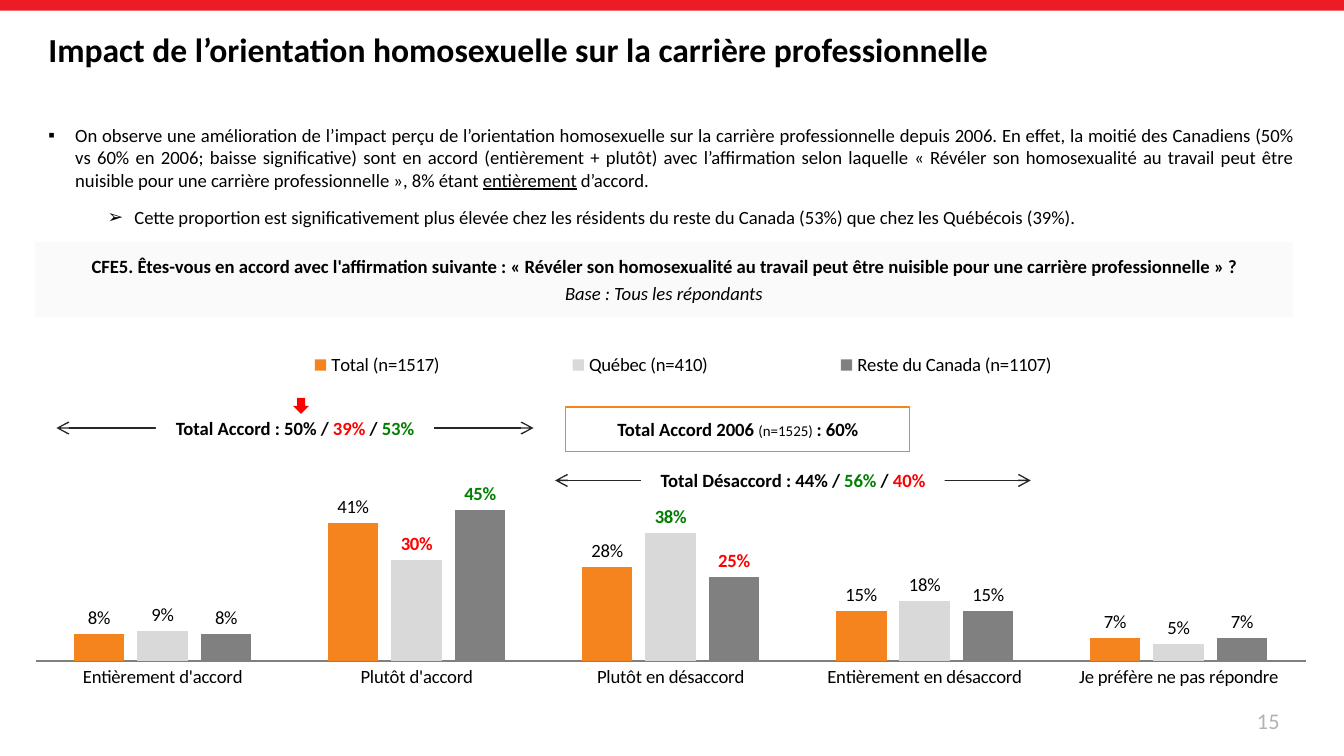
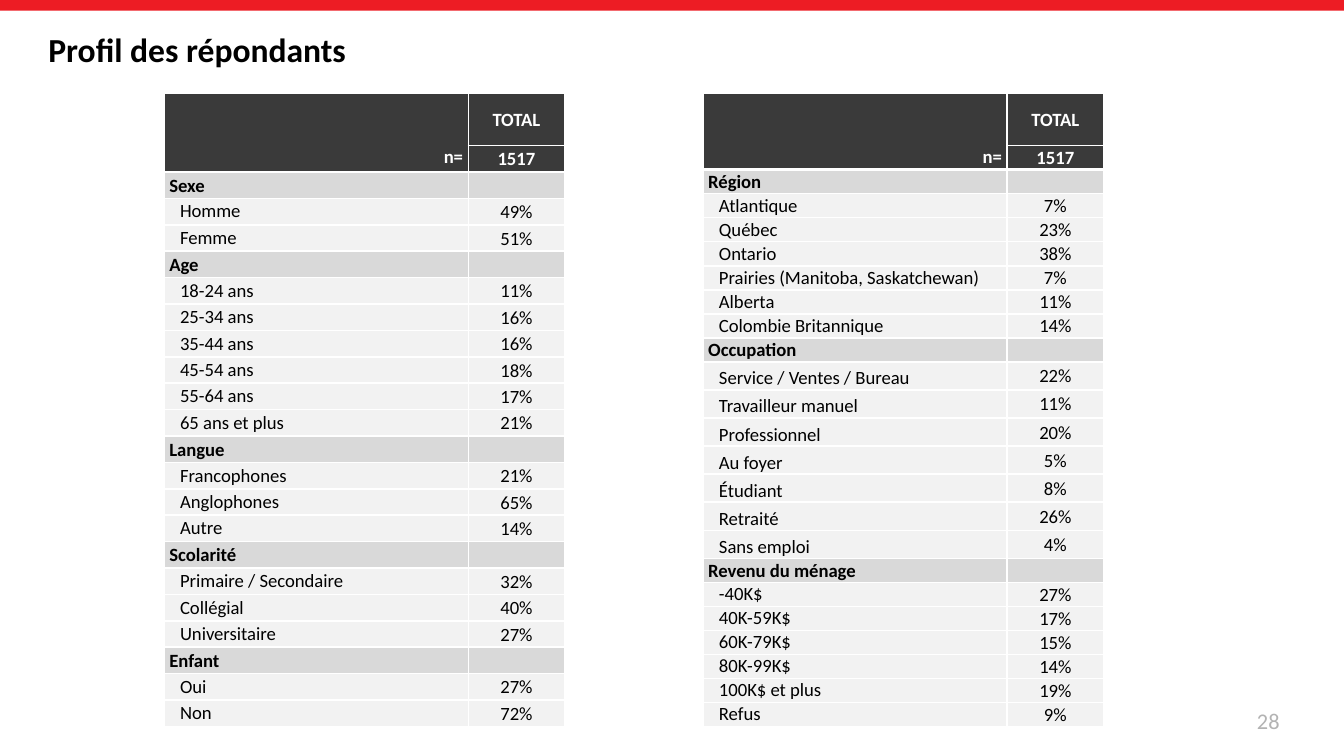
import typing

import lxml.etree
import pptx
import pptx.chart.data
import pptx.dml.color
import pptx.enum.chart
import pptx.enum.shapes
import pptx.enum.text
import pptx.oxml.ns
import pptx.util

Color = pptx.dml.color.RGBColor
Pt = pptx.util.Pt
Align = pptx.enum.text.PP_ALIGN
Anchor = pptx.enum.text.MSO_ANCHOR
Shape = pptx.enum.shapes.MSO_SHAPE
qn = pptx.oxml.ns.qn

BRAND = Color(0xED, 0x1C, 0x24)
BLACK = Color(0, 0, 0)
WHITE = Color(0xFF, 0xFF, 0xFF)
RED = Color(0xFF, 0, 0)
GREEN = Color(0, 0x80, 0)
ORANGE = Color(0xF5, 0x84, 0x1F)
DARK = Color(0x3A, 0x3A, 0x3A)
INK = Color(0x26, 0x26, 0x26)
GRAY = Color(0x80, 0x80, 0x80)
SILVER = Color(0xB3, 0xB3, 0xB3)
LIGHT = Color(0xD9, 0xD9, 0xD9)
PALE = Color(0xF2, 0xF2, 0xF2)
MIST = Color(0xFA, 0xFA, 0xFA)
FONT = "Calibri"

# The slide is a grid of square cells: 100 columns by 56.25 rows.
COLS, ROWS = 100, 56.25
CELL = pptx.util.Inches(0.1)


def span(cells):
    return pptx.util.Emu(round(cells * CELL))


class Box(typing.NamedTuple):
    left: float
    top: float
    width: float
    height: float

    def inner(self, left, top, width, height):
        """Box placed from this one's top left corner."""
        return Box(self.left + left, self.top + top, width, height)

    def spans(self):
        return [span(side) for side in self]


PAGE = Box(0, 0, COLS, ROWS)


def write(par, text, size=10, color=BLACK, bold=False, italic=False, under=False):
    run = par.add_run()
    run.text = text
    style(run.font, size, color, bold)
    run.font.italic = italic
    run.font.underline = under


def style(font, size=10, color=BLACK, bold=False, name=FONT):
    font.name, font.size, font.bold = name, Pt(size), bold
    font.color.rgb = color


def frame(shape, anchor=Anchor.MIDDLE, align=Align.LEFT, inset=None):
    """Set up the text frame and return its first paragraph."""
    text = shape.text_frame
    text.word_wrap = True
    text.auto_size = pptx.enum.text.MSO_AUTO_SIZE.NONE
    text.vertical_anchor = anchor
    if inset is not None:
        text.margin_left = text.margin_right = span(inset)
        text.margin_top = text.margin_bottom = span(inset)
    par = text.paragraphs[0]
    par.alignment = align
    return par


def place(shape, box):
    shape.left, shape.top, shape.width, shape.height = box.spans()


def draw(slide, box, kind=Shape.RECTANGLE, fill=None, line=None):
    shape = slide.shapes.add_shape(kind, *box.spans())
    shape.shadow.inherit = False
    if fill is None:
        shape.fill.background()
    else:
        shape.fill.solid()
        shape.fill.fore_color.rgb = fill
    if line is None:
        shape.line.fill.background()
    else:
        shape.line.color.rgb = line
        shape.line.width = Pt(0.75)
    return shape


def start(deck, layout, title, number):
    """Add a slide with the band, title and page number."""
    slide = deck.slides.add_slide(deck.slide_layouts[layout])
    draw(slide, PAGE.inner(0, 0, COLS, 0.8), fill=BRAND)
    place(slide.shapes.title, PAGE.inner(2.6, 0.8, 81.7, 5.7))
    write(frame(slide.shapes.title), title, size=18, bold=True)
    page = slide.shapes.add_textbox(*PAGE.inner(72.9, 52.1, 23.3, 3).spans())
    write(frame(page, align=Align.RIGHT), str(number), size=12, color=SILVER)
    return slide


def bullet(par, mark, left):
    props = par._p.get_or_add_pPr()
    props.set("marL", str(span(left)))
    props.set("indent", str(span(-2)))
    lxml.etree.SubElement(props, qn("a:buChar"), char=mark)
    par.alignment = Align.JUSTIFY
    par.space_after = Pt(6)


def add_body(slide, box):
    body = slide.placeholders[1]
    place(body, box)
    first = frame(body, anchor=Anchor.TOP)
    bullet(first, "▪", 2)
    first.space_before = Pt(0)
    write(first, "On observe une amélioration de l’impact perçu de l’orientation "
          "homosexuelle sur la carrière professionnelle depuis 2006. En effet, la moitié "
          "des Canadiens (50% vs 60% en 2006; baisse significative) sont en accord "
          "(entièrement + plutôt) avec l’affirmation selon laquelle « Révéler son "
          "homosexualité au travail peut être nuisible pour une carrière "
          "professionnelle », 8% étant ")
    write(first, "entièrement", under=True)
    write(first, " d’accord.")
    second = body.text_frame.add_paragraph()
    second.level = 1
    bullet(second, "➢", 6.4)
    second.space_before = Pt(2)
    write(second, "Cette proportion est significativement plus élevée chez les résidents "
          "du reste du Canada (53%) que chez les Québécois (39%).")


def add_query(slide, box):
    panel = draw(slide, box, fill=MIST)
    par = frame(panel, align=Align.CENTER)
    write(par, "CFE5. Êtes-vous en accord avec l'affirmation suivante : « Révéler son "
          "homosexualité au travail peut être nuisible pour une carrière "
          "professionnelle » ?", bold=True)
    base = panel.text_frame.add_paragraph()
    base.alignment = Align.CENTER
    base.space_before = Pt(2)
    write(base, "Base : Tous les répondants", italic=True)


CATS = ["Entièrement d'accord", "Plutôt d'accord", "Plutôt en désaccord",
        "Entièrement en désaccord", "Je préfère ne pas répondre"]
# Name, values, bar colour, colours of the marked labels
SERIES = [
    ("Total (n=1517)", [0.08, 0.41, 0.28, 0.15, 0.07], ORANGE, {}),
    ("Québec (n=410)", [0.09, 0.3, 0.38, 0.18, 0.05], LIGHT, {1: RED, 2: GREEN}),
    ("Reste du Canada (n=1107)", [0.08, 0.45, 0.25, 0.15, 0.07], GRAY,
     {1: GREEN, 2: RED}),
]


def lay(parent, index, **sides):
    """Give a chart part a fixed place, in shares of the chart."""
    for old in parent.findall(qn("c:layout")):
        parent.remove(old)
    layout = lxml.etree.Element(qn("c:layout"))
    manual = lxml.etree.SubElement(layout, qn("c:manualLayout"))
    for key, value in sides.items():
        lxml.etree.SubElement(manual, qn("c:" + key), val=str(value))
    parent.insert(index, layout)


def add_bars(slide, box):
    data = pptx.chart.data.CategoryChartData(number_format="0%")
    data.categories = CATS
    for name, values, *_ in SERIES:
        data.add_series(name, values)
    kind = pptx.enum.chart.XL_CHART_TYPE.COLUMN_CLUSTERED
    chart = slide.shapes.add_chart(kind, *box.spans(), data).chart
    style(chart.font, 9, name="Arial")
    chart.has_title = False
    chart.has_legend = True
    chart.legend.position = pptx.enum.chart.XL_LEGEND_POSITION.TOP
    chart.legend.include_in_layout = False
    style(chart.legend.font)
    lay(chart.legend._element, 1, xMode="edge", yMode="edge",
        x=0.12, y=0.11, w=0.78, h=0.06)
    lay(chart._chartSpace.chart.plotArea, 0, layoutTarget="inner", xMode="edge",
        yMode="edge", x=0, y=0.21, w=1, h=0.69)

    none = pptx.enum.chart.XL_TICK_MARK.NONE
    base, scale = chart.category_axis, chart.value_axis
    base.major_tick_mark = base.minor_tick_mark = none
    base.format.line.color.rgb = GRAY
    style(base.tick_labels.font)
    scale.minimum_scale, scale.maximum_scale, scale.major_unit = 0, 0.8, 0.1
    scale.has_major_gridlines = False
    scale.visible = False

    plot = chart.plots[0]
    plot.gap_width, plot.overlap, plot.vary_by_categories = 150, -25, False
    end = pptx.enum.chart.XL_LABEL_POSITION.OUTSIDE_END
    for bars, (_, _, color, marks) in zip(plot.series, SERIES):
        bars.format.fill.solid()
        bars.format.fill.fore_color.rgb = color
        labels = bars.data_labels
        labels.show_value = True
        labels.number_format, labels.number_format_is_linked = "0%", False
        labels.position = end
        style(labels.font)
        for index, mark in marks.items():
            label = bars.points[index].data_label
            style(label.font, color=mark, bold=True)
            label.position = end


def add_range(slide, box, width, words):
    """Draw a two-headed arrow across the box, with a label in its middle."""
    left, top, wide, high = box.spans()
    middle = top + high // 2
    kind = pptx.enum.shapes.MSO_CONNECTOR.STRAIGHT
    arrow = slide.shapes.add_connector(kind, left, middle, left + wide, middle)
    arrow.line.color.rgb = INK
    arrow.line.width = Pt(0.75)
    props = arrow._element.spPr
    for end in ("a:headEnd", "a:tailEnd"):
        lxml.etree.SubElement(props.find(qn("a:ln")), qn(end), type="arrow")
    lxml.etree.SubElement(props, qn("a:effectLst"))
    label = draw(slide, box.inner((box.width - width) / 2, 0, width, box.height),
                 fill=WHITE)
    par = frame(label, anchor=Anchor.TOP, align=Align.CENTER, inset=0.4)
    for text, color in words:
        write(par, text, color=color, bold=True)


def add_chart(slide, box):
    add_bars(slide, box)
    add_range(slide, box.inner(1.6, 7.5, 35.5, 2.5), 20.7,
              [("Total Accord : 50% / ", BLACK), ("39%", RED), (" / ", BLACK),
               ("53%", GREEN)])
    add_range(slide, box.inner(38.7, 11.4, 35.4, 2.5), 22.6,
              [("Total Désaccord : 44% / ", BLACK), ("56%", GREEN), (" / ", BLACK),
               ("40%", RED)])
    past = draw(slide, box.inner(39.5, 7.2, 25.6, 3.3), Shape.FLOWCHART_PROCESS,
                line=ORANGE)
    par = frame(past, align=Align.CENTER)
    write(par, "Total Accord 2006 ", bold=True)
    write(par, "(n=1525) ", size=8)
    write(par, ": 60%", bold=True)
    draw(slide, box.inner(19.2, 6.5, 1.2, 1.2), Shape.DOWN_ARROW, fill=RED)


# Heading, row height in units, rows
LEFT = [
    ("Sexe", 1, [("Homme", 49), ("Femme", 51)]),
    ("Age", 1, [("18-24 ans", 11), ("25-34 ans", 16), ("35-44 ans", 16),
                ("45-54 ans", 18), ("55-64 ans", 17), ("65 ans et plus", 21)]),
    ("Langue", 1, [("Francophones", 21), ("Anglophones", 65), ("Autre", 14)]),
    ("Scolarité", 1, [("Primaire / Secondaire", 32), ("Collégial", 40),
                      ("Universitaire", 27)]),
    ("Enfant", 1, [("Oui", 27), ("Non", 72)]),
]
RIGHT = [
    ("Région", 1, [("Atlantique", 7), ("Québec", 23), ("Ontario", 38),
                   ("Prairies (Manitoba, Saskatchewan)", 7), ("Alberta", 11),
                   ("Colombie Britannique", 14)]),
    ("Occupation", 1.17, [("Service / Ventes / Bureau", 22), ("Travailleur manuel", 11),
                          ("Professionnel", 20), ("Au foyer", 5), ("Étudiant", 8),
                          ("Retraité", 26), ("Sans emploi", 4)]),
    ("Revenu du ménage", 1, [("-40K$", 27), ("40K-59K$", 17), ("60K-79K$", 15),
                             ("80K-99K$", 14), ("100K$ et plus", 19), ("Refus", 9)]),
]


def set_cell(cell, text, fill, align=Align.LEFT, left=0.1, right=0.1, top=0.1,
             anchor=Anchor.MIDDLE, bare="", thick="", **form):
    """Fill one cell; bare and thick name sides (L, R, T, B) with other borders."""
    props = cell._tc.get_or_add_tcPr()
    for side in "LRTB":
        width = Pt(1.5 if side in thick else 1)
        line = lxml.etree.SubElement(props, qn("a:ln" + side), w=str(width))
        if side in bare:
            lxml.etree.SubElement(line, qn("a:noFill"))
        else:
            solid = lxml.etree.SubElement(line, qn("a:solidFill"))
            lxml.etree.SubElement(solid, qn("a:srgbClr"), val=str(WHITE))
    cell.fill.solid()
    cell.fill.fore_color.rgb = fill
    cell.vertical_anchor = anchor
    cell.margin_left, cell.margin_right = span(left), span(right)
    cell.margin_top, cell.margin_bottom = span(top), 0
    par = cell.text_frame.paragraphs[0]
    par.alignment = align
    if text:
        write(par, text, **form)
    else:
        lxml.etree.SubElement(par._p, qn("a:endParaRPr"), sz="1000")


def add_table(slide, box, groups, head):
    """Draw the profile table; head is the first row's height in units."""
    units = [head, 1]
    for _, unit, rows in groups:
        units += [1] + [unit] * len(rows)
    table = slide.shapes.add_table(len(units), 2, *box.spans()).table
    table.first_row = table.horz_banding = False
    for column, share in zip(table.columns, (0.76, 0.24)):
        column.width = span(box.width * share)
    for row, unit in zip(table.rows, units):
        row.height = span(box.height * unit / sum(units))

    white = dict(color=WHITE, bold=True)
    mid = Align.CENTER
    set_cell(table.cell(0, 0), "", DARK, bare="B")
    set_cell(table.cell(0, 1), "TOTAL", DARK, mid, **white)
    set_cell(table.cell(1, 0), "n=", DARK, Align.RIGHT, right=0.4, top=0,
             anchor=Anchor.TOP, bare="T", thick="B", **white)
    set_cell(table.cell(1, 1), "1517", DARK, mid, thick="B", **white)
    index = 2
    for title, unit, rows in groups:
        thick = "T" if index == 2 else ""
        set_cell(table.cell(index, 0), title, LIGHT, left=0.4, thick=thick, bold=True)
        set_cell(table.cell(index, 1), "", LIGHT, thick=thick)
        for index, (label, value) in enumerate(rows, index + 1):
            set_cell(table.cell(index, 0), label, PALE, left=1.2,
                     top=0.4 if unit > 1 else 0)
            set_cell(table.cell(index, 1), f"{value}%", PALE, mid)
        index += 1


def add_impact(deck):
    slide = start(deck, 1, "Impact de l’orientation homosexuelle sur la carrière "
                  "professionnelle", 15)
    add_body(slide, PAGE.inner(2.6, 8.7, 94.6, 8.6))
    add_query(slide, PAGE.inner(2.6, 18, 93.6, 5.6))
    add_chart(slide, PAGE.inner(2.6, 23.1, 94.6, 29))


def add_profile(deck):
    slide = start(deck, 5, "Profil des répondants", 28)
    add_table(slide, PAGE.inner(12.2, 6.9, 29.8, 47.2), LEFT, 2)
    add_table(slide, PAGE.inner(52.3, 6.9, 29.8, 47.2), RIGHT, 2.2)


def main():
    deck = pptx.Presentation()
    deck.slide_width, deck.slide_height = span(COLS), span(ROWS)
    add_impact(deck)
    add_profile(deck)
    deck.save("out.pptx")


if __name__ == "__main__":
    main()
